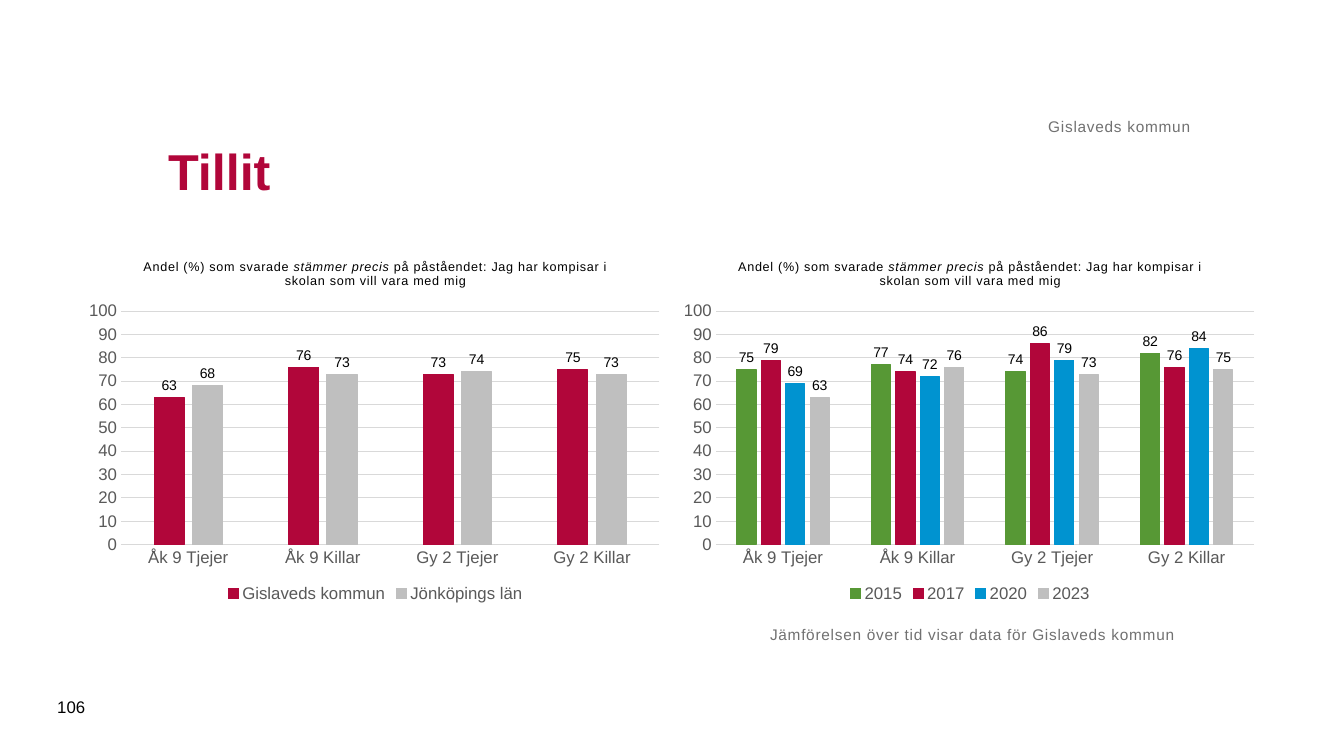
from lxml.etree import SubElement
from pptx import Presentation
from pptx.chart.data import CategoryChartData
from pptx.dml.color import RGBColor
from pptx.enum.chart import XL_CHART_TYPE, XL_LABEL_POSITION, XL_LEGEND_POSITION, XL_TICK_MARK
from pptx.enum.text import MSO_ANCHOR, PP_ALIGN
from pptx.oxml.ns import qn
from pptx.util import Pt

FACE = "Arial"
RED, GREEN, BLUE, SILVER = "B1063A", "579835", "0093D0", "BFBFBF"
BLACK, GREY, DARK, PALE = "000000", "717171", "595959", "D9D9D9"
FORMAT = "#,##0;#,##0"
GROUPS = ["Åk 9 Tjejer", "Åk 9 Killar", "Gy 2 Tjejer", "Gy 2 Killar"]
CLAIM = [
    ("Andel (%) som svarade ", False),
    ("stämmer precis", True),
    (" på påståendet: Jag har kompisar i skolan som vill vara med mig", False),
]
REGION = [
    ("Gislaveds kommun", RED, [63, 76, 73, 75]),
    ("Jönköpings län", SILVER, [68, 73, 74, 73]),
]
YEARS = [
    ("2015", GREEN, [75, 77, 74, 82]),
    ("2017", RED, [79, 74, 86, 76]),
    ("2020", BLUE, [69, 72, 79, 84]),
    ("2023", SILVER, [63, 76, 73, 75]),
]
INNER = {"x": 0.07, "y": 0.19, "w": 0.91, "h": 0.64}


def rgb(code):
    return RGBColor.from_string(code)


def style(font, size, color, bold=False, italic=False):
    font.name = FACE
    font.size = Pt(size)
    font.color.rgb = rgb(color)
    font.bold = bold
    font.italic = italic


def add_run(para, text, size, color, bold=False, italic=False, gap=0):
    run = para.add_run()
    run.text = text
    style(run.font, size, color, bold, italic)
    if gap:
        run._r.get_or_add_rPr().set("spc", str(gap))


def add_text(slide, box, text, size, color, bold=False, gap=0, inset=True,
             anchor=MSO_ANCHOR.MIDDLE, align=PP_ALIGN.LEFT):
    frame = slide.shapes.add_textbox(*map(Pt, box)).text_frame
    frame.word_wrap = True
    frame.vertical_anchor = anchor
    if not inset:
        frame.margin_left = frame.margin_right = Pt(0)
        frame.margin_top = frame.margin_bottom = Pt(0)
    para = frame.paragraphs[0]
    para.alignment = align
    add_run(para, text, size, color, bold, gap=gap)


def set_line(line, color):
    line.color.rgb = rgb(color)
    line.width = Pt(0.75)


def set_inner(chart):
    area = chart._chartSpace.find(".//" + qn("c:plotArea"))
    old = area.find(qn("c:layout"))
    if old is not None:
        area.remove(old)
    layout = SubElement(area, qn("c:layout"))
    area.insert(0, layout)
    manual = SubElement(layout, qn("c:manualLayout"))
    parts = {"layoutTarget": "inner", "xMode": "edge", "yMode": "edge", **INNER}
    for name, value in parts.items():
        SubElement(manual, qn("c:" + name)).set("val", str(value))


def set_axes(chart):
    for axis in (chart.category_axis, chart.value_axis):
        axis.major_tick_mark = axis.minor_tick_mark = XL_TICK_MARK.NONE
        style(axis.tick_labels.font, 12, DARK)
    set_line(chart.category_axis.format.line, PALE)
    scale = chart.value_axis
    scale.minimum_scale, scale.maximum_scale = 0, 100
    scale.major_unit = 10
    scale.format.line.fill.background()
    set_line(scale.major_gridlines.format.line, PALE)
    scale.tick_labels.number_format = FORMAT
    scale.tick_labels.number_format_is_linked = False


def set_bars(plot, series):
    plot.gap_width, plot.overlap = 219, -27
    plot.vary_by_categories = False
    for bars, (_, color, _) in zip(plot.series, series):
        bars.format.fill.solid()
        bars.format.fill.fore_color.rgb = rgb(color)
        set_line(bars.format.line, color)
        labels = bars.data_labels
        labels.show_value = True
        labels.position = XL_LABEL_POSITION.OUTSIDE_END
        labels.number_format = FORMAT
        labels.number_format_is_linked = False
        style(labels.font, 10, BLACK)


def add_bars(slide, left, series):
    data = CategoryChartData()
    data.categories = GROUPS
    for name, _, values in series:
        data.add_series(name, values)
    box = map(Pt, (left, 172.8, 422.6, 260.6))
    chart = slide.shapes.add_chart(XL_CHART_TYPE.COLUMN_CLUSTERED, *box, data).chart
    style(chart.font, 10, BLACK)
    chart.has_title = True
    para = chart.chart_title.text_frame.paragraphs[0]
    for text, italic in CLAIM:
        add_run(para, text, 9, BLACK, italic=italic, gap=50)
    chart.chart_title.include_in_layout = False
    chart.has_legend = True
    chart.legend.position = XL_LEGEND_POSITION.BOTTOM
    chart.legend.include_in_layout = False
    style(chart.legend.font, 12, DARK)
    set_axes(chart)
    set_bars(chart.plots[0], series)
    set_inner(chart)


def main():
    deck = Presentation()
    deck.slide_width, deck.slide_height = Pt(960), Pt(540)
    slide = deck.slides.add_slide(deck.slide_layouts[6])
    add_bars(slide, 56.9, REGION)
    add_bars(slide, 481.7, YEARS)
    add_text(slide, (113, 70.6, 737.3, 102.2), "Tillit", 36, RED, bold=True)
    add_text(slide, (550, 446.4, 382.3, 67.7),
             "Jämförelsen över tid visar data för Gislaveds kommun",
             11, GREY, gap=50, inset=False, anchor=MSO_ANCHOR.TOP)
    add_text(slide, (113, 44.6, 737.3, 52.6), "Gislaveds kommun", 11, GREY,
             gap=50, inset=False, anchor=MSO_ANCHOR.BOTTOM, align=PP_ALIGN.RIGHT)
    add_text(slide, (33.8, 490.3, 41, 28.8), "106", 12, BLACK)
    deck.save("out.pptx")


if __name__ == "__main__":
    main()
